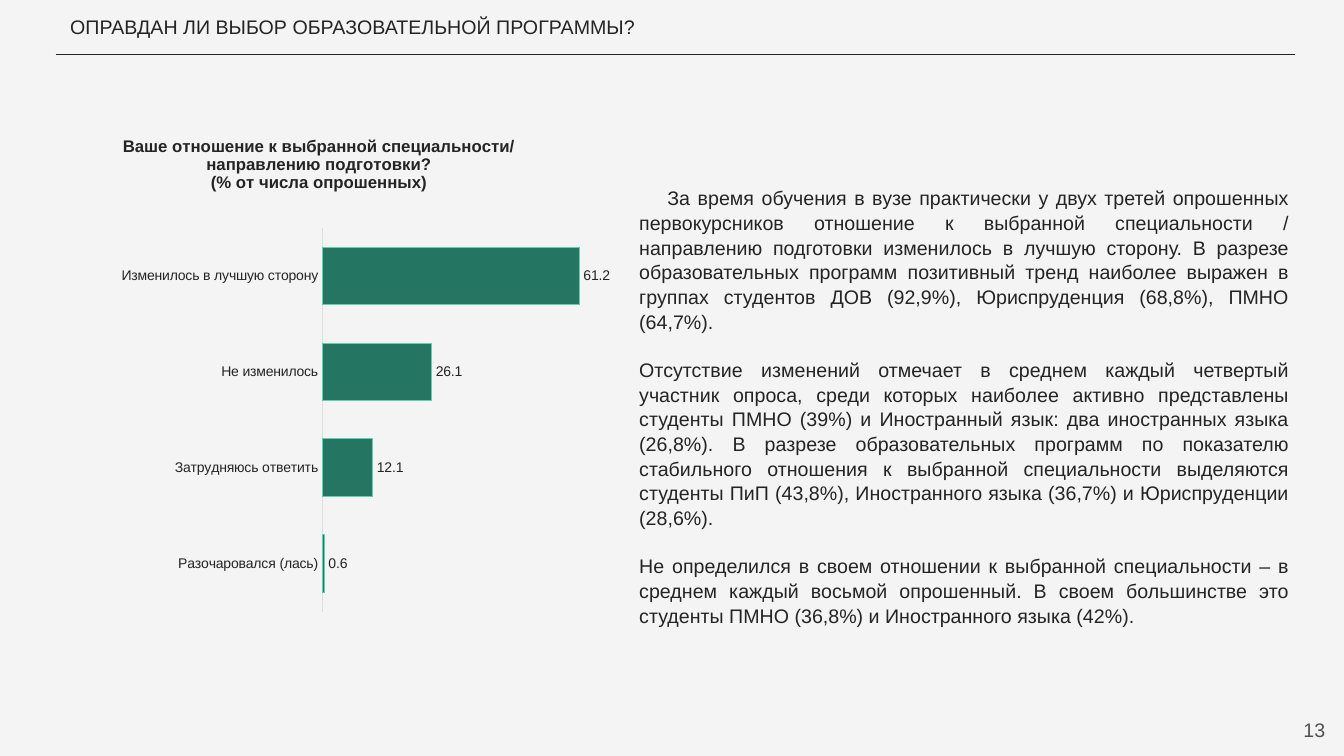
from dataclasses import dataclass

from lxml.etree import SubElement
from pptx import Presentation
from pptx.chart.chart import Chart
from pptx.chart.data import CategoryChartData
from pptx.dml.color import RGBColor
from pptx.enum.chart import XL_CHART_TYPE, XL_LABEL_POSITION, XL_TICK_MARK
from pptx.enum.shapes import MSO_CONNECTOR
from pptx.enum.text import PP_ALIGN
from pptx.oxml import parse_xml
from pptx.oxml.ns import nsdecls, qn
from pptx.slide import Slide
from pptx.text.text import Font
from pptx.util import Cm, Pt

FONT = "Arial"
INK, GREY, PAPER = "242424", "505050", "F4F4F4"
GREEN, MINT, AXIS = "247561", "62CFB5", "DEDEDE"
INSET = 0.33


@dataclass
class TextBlock:
    left: float
    top: float
    width: float
    height: float
    paragraphs: list[str]
    color: str = INK
    align: PP_ALIGN = PP_ALIGN.LEFT
    left_inset: float = INSET
    top_inset: float = INSET
    first_indent: float = 0
    gap: float = 0


TEXT_BLOCKS = [
    # Heading
    TextBlock(0, 0.03, 18.08, 1.27, ["ОПРАВДАН ЛИ ВЫБОР ОБРАЗОВАТЕЛЬНОЙ ПРОГРАММЫ?"],
              left_inset=1.77),
    # Commentary
    TextBlock(15.78, 3.76, 17.04, 13.08, [
        "За время обучения в вузе практически у двух третей опрошенных первокурсников "
        "отношение к выбранной специальности / направлению подготовки изменилось в лучшую "
        "сторону. В разрезе образовательных программ позитивный тренд наиболее выражен в "
        "группах студентов ДОВ (92,9%), Юриспруденция (68,8%), ПМНО (64,7%).",
        "Отсутствие изменений отмечает в среднем каждый четвертый участник опроса, среди "
        "которых наиболее активно представлены студенты ПМНО (39%) и Иностранный язык: два "
        "иностранных языка (26,8%). В разрезе образовательных программ по показателю "
        "стабильного отношения к выбранной специальности выделяются студенты ПиП (43,8%), "
        "Иностранного языка (36,7%) и Юриспруденции (28,6%).",
        "Не определился в своем отношении к выбранной специальности – в среднем каждый "
        "восьмой опрошенный. В своем большинстве это студенты ПМНО (36,8%) и Иностранного "
        "языка (42%).",
    ], align=PP_ALIGN.JUSTIFY, top_inset=0.9, first_indent=0.71, gap=16.9),
    # Page number
    TextBlock(31.7, 17.75, 2.03, 1.45, ["13"], color=GREY, align=PP_ALIGN.RIGHT),
]

CHART_TITLE = ["Ваше отношение к выбранной специальности/ направлению подготовки?",
               "(% от числа опрошенных)"]
ANSWERS = {
    "Разочаровался (лась)": 0.6,
    "Затрудняюсь ответить": 12.1,
    "Не изменилось": 26.1,
    "Изменилось в лучшую сторону": 61.2,
}


def rgb(color: str) -> RGBColor:
    return RGBColor.from_string(color)


def style_font(font: Font, size: float, color: str = INK, bold: bool = False) -> None:
    font.name, font.size, font.bold = FONT, Pt(size), bold
    font.color.rgb = rgb(color)


def add_text(slide: Slide, block: TextBlock) -> None:
    shape = slide.shapes.add_textbox(Cm(block.left), Cm(block.top),
                                     Cm(block.width), Cm(block.height))
    frame = shape.text_frame
    frame.word_wrap = True
    frame.margin_left, frame.margin_top = Cm(block.left_inset), Cm(block.top_inset)
    frame.margin_right = frame.margin_bottom = Cm(INSET)
    for index, text in enumerate(block.paragraphs):
        paragraph = frame.add_paragraph() if index else frame.paragraphs[0]
        paragraph.alignment = block.align
        paragraph.line_spacing = 1.05
        if index:
            paragraph.space_before = Pt(block.gap)
        elif block.first_indent:
            paragraph._p.get_or_add_pPr().set("indent", str(Cm(block.first_indent)))
        run = paragraph.add_run()
        run.text = text
        style_font(run.font, 14, block.color)


def add_rule(slide: Slide) -> None:
    rule = slide.shapes.add_connector(MSO_CONNECTOR.STRAIGHT,
                                      Cm(1.4), Cm(1.37), Cm(32.64), Cm(1.37))
    rule.line.color.rgb = rgb(INK)
    rule.line.width = Pt(0.75)
    SubElement(rule.element.spPr, qn("a:effectLst"))


def place(element, position: int, **values: str | float) -> None:
    """Give a chart part a manual layout as its child at the given position."""
    for old in element.findall(qn("c:layout")):
        element.remove(old)
    fields = "".join(f'<c:{name} val="{value}"/>' for name, value in values.items())
    element.insert(position, parse_xml(
        f'<c:layout {nsdecls("c")}><c:manualLayout>{fields}</c:manualLayout></c:layout>'))


def add_chart_title(chart: Chart) -> None:
    chart.has_title = True
    frame = chart.chart_title.text_frame
    for index, text in enumerate(CHART_TITLE):
        paragraph = frame.add_paragraph() if index else frame.paragraphs[0]
        paragraph.alignment = PP_ALIGN.CENTER
        run = paragraph.add_run()
        run.text = text
        style_font(run.font, 12, bold=True)
    chart.chart_title.include_in_layout = False
    place(chart.chart_title.element, 1, xMode="edge", yMode="edge", x=0.15, y=0.03)


def add_answer_chart(slide: Slide) -> None:
    data = CategoryChartData(number_format="0.0")
    data.categories = list(ANSWERS)
    data.add_series("Ответы", list(ANSWERS.values()))
    chart = slide.shapes.add_chart(XL_CHART_TYPE.BAR_CLUSTERED, Cm(0.81), Cm(2.95),
                                   Cm(14.73), Cm(13.08), data).chart
    style_font(chart.font, 10)
    chart.has_legend = False
    add_chart_title(chart)
    place(chart.element.find(f".//{qn('c:plotArea')}"), 0, layoutTarget="inner",
          xMode="edge", yMode="edge", x=0.496, y=0.214, w=0.504, h=0.739)

    # Axes
    category_axis, value_axis = chart.category_axis, chart.value_axis
    category_axis.major_tick_mark = XL_TICK_MARK.NONE
    category_axis.format.line.color.rgb = rgb(AXIS)
    category_axis.format.line.width = Pt(0.75)
    style_font(category_axis.tick_labels.font, 10)
    value_axis.has_major_gridlines = False
    value_axis.visible = False
    value_axis.minimum_scale, value_axis.maximum_scale = 0, 70

    # Bars and their labels
    plot = chart.plots[0]
    plot.gap_width = 66
    plot.vary_by_categories = False
    series = plot.series[0]
    series.format.fill.solid()
    series.format.fill.fore_color.rgb = rgb(GREEN)
    series.format.line.color.rgb = rgb(MINT)
    series.format.line.width = Pt(0.75)
    labels = series.data_labels
    labels.show_value = True
    labels.position = XL_LABEL_POSITION.OUTSIDE_END
    style_font(labels.font, 10)


def main() -> None:
    presentation = Presentation()
    presentation.slide_width, presentation.slide_height = Cm(33.87), Cm(19.05)
    slide = presentation.slides.add_slide(presentation.slide_layouts[6])
    slide.background.fill.solid()
    slide.background.fill.fore_color.rgb = rgb(PAPER)
    add_rule(slide)
    for block in TEXT_BLOCKS:
        add_text(slide, block)
    add_answer_chart(slide)
    presentation.save("out.pptx")


if __name__ == "__main__":
    main()
